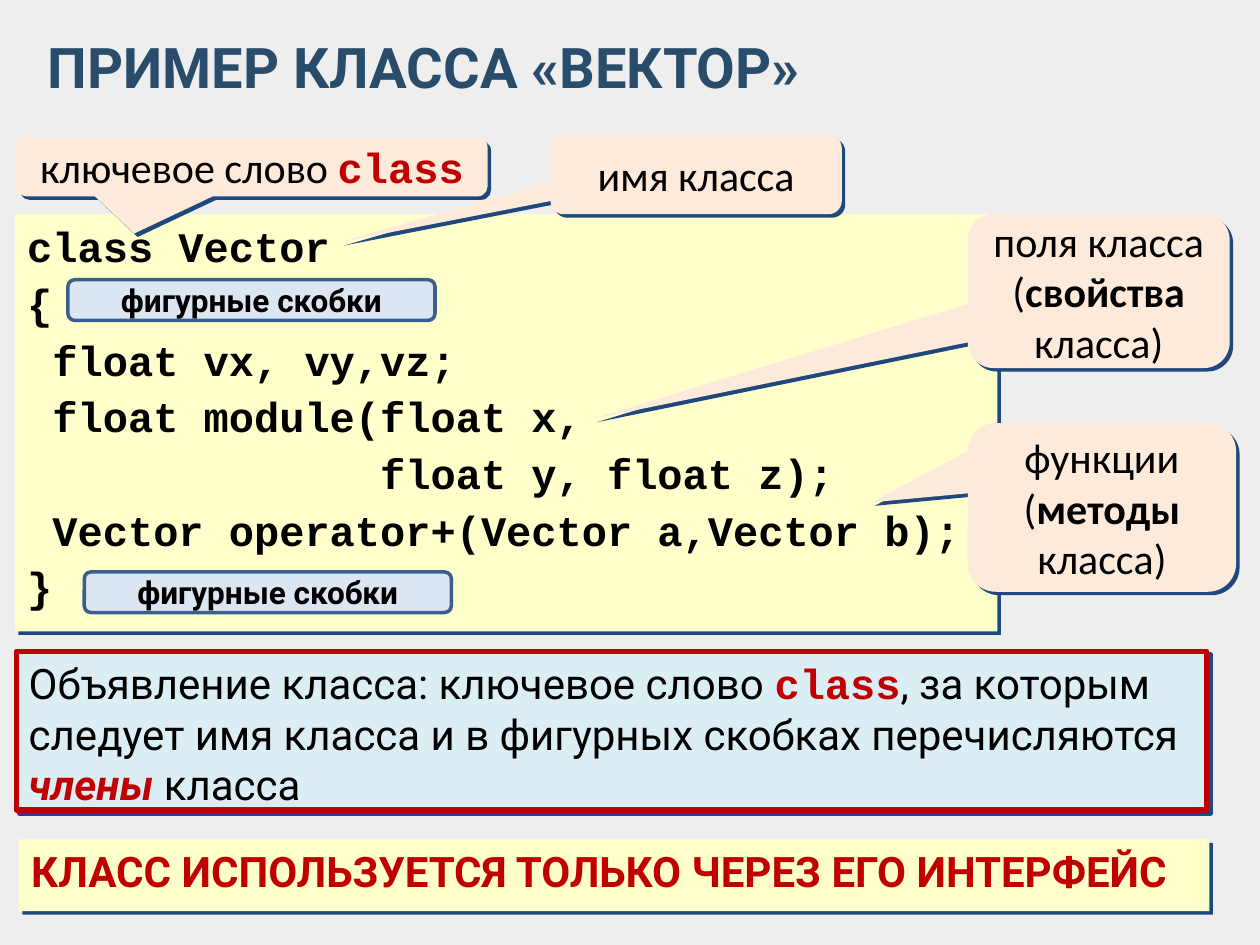
from dataclasses import dataclass

from lxml import etree
from pptx import Presentation
from pptx.dml.color import RGBColor
from pptx.enum.shapes import MSO_SHAPE
from pptx.enum.text import MSO_ANCHOR, PP_ALIGN
from pptx.oxml.ns import qn
from pptx.util import Cm, Pt

RECTANGLE = MSO_SHAPE.RECTANGLE
ROUNDED = MSO_SHAPE.ROUNDED_RECTANGLE
CALLOUT = MSO_SHAPE.ROUNDED_RECTANGULAR_CALLOUT
LEFT, CENTER = PP_ALIGN.LEFT, PP_ALIGN.CENTER
TOP, MIDDLE = MSO_ANCHOR.TOP, MSO_ANCHOR.MIDDLE
TITLE_ONLY = 5


@dataclass(frozen=True)
class Theme:
    background: str = "EEEEEE"
    title: str = "284C6A"
    text: str = "000000"
    accent: str = "C00000"
    shadow: str = "1F497D"
    note: str = "FFFFCC"
    definition: str = "DBEEF4"
    callout: str = "FDEADA"
    label: str = "DCE6F2"
    label_line: str = "3A5F8C"
    sans: str = "Roboto"
    callout_font: str = "Calibri"
    mono: str = "Courier New"
    title_size: int = 32
    body_size: int = 24
    label_size: int = 18


THEME = Theme()
KEYWORD = {"name": THEME.mono, "bold": True, "color": THEME.accent}

CODE = [
    "class Vector",
    "{",
    " float vx, vy,vz;",
    " float module(float x,",
    "              float y, float z);",
    " Vector operator+(Vector a,Vector b);",
    "}",
]


def rgb(value):
    return RGBColor.from_string(value)


def style_font(font, name=None, size=None, color=None, bold=None, italic=None):
    if name:
        font.name = name
    if size:
        font.size = Pt(size)
    if color:
        font.color.rgb = rgb(color)
    font.bold = bold
    font.italic = italic


def write(box, paragraphs, align=LEFT, anchor=TOP, side=0.25, space=0, **font):
    """Fill a box; each paragraph is a list of (text, font changes) spans."""
    frame = box.text_frame
    frame.word_wrap = True
    frame.vertical_anchor = anchor
    frame.margin_left = frame.margin_right = Cm(side)
    frame.margin_top = frame.margin_bottom = Cm(0.13)
    for index, spans in enumerate(paragraphs):
        para = frame.add_paragraph() if index else frame.paragraphs[0]
        para.alignment = align
        if index:
            para.space_before = Pt(space)
        style_font(para.font, **font)
        for text, changes in spans:
            span = para.add_run()
            span.text = text
            if changes:
                style_font(span.font, **changes)


def add_box(page, kind, place, fill, line=None, width=0, shadow=True):
    box = page.shapes.add_shape(kind, *(Cm(length) for length in place))
    box.fill.solid()
    box.fill.fore_color.rgb = rgb(fill)
    if line:
        box.line.color.rgb = rgb(line)
        box.line.width = Pt(width)
    else:
        box.line.fill.background()
    box.shadow.inherit = False
    if shadow:
        effects = box._element.spPr.find(qn("a:effectLst"))
        outer = etree.SubElement(effects, qn("a:outerShdw"), dist=str(Pt(2.8)),
                                 dir="2700000", algn="ctr", rotWithShape="0")
        etree.SubElement(outer, qn("a:srgbClr"), val=THEME.shadow)
    return box


def add_callout(page, place, tail, spans, side=0.25):
    """Tail is the tip's offset from the centre, in widths and heights."""
    box = add_box(page, CALLOUT, place, THEME.callout)
    box.adjustments[0], box.adjustments[1] = tail
    write(box, [spans], CENTER, MIDDLE, side, name=THEME.callout_font,
          size=THEME.body_size, color=THEME.text)


def add_brace_label(page, left, top):
    box = add_box(page, ROUNDED, (left, top, 7.4, 0.82), THEME.label,
                  THEME.label_line, 2, shadow=False)
    write(box, [[("фигурные скобки", {})]], CENTER, MIDDLE, name=THEME.sans,
          size=THEME.label_size, color=THEME.text, bold=True)


def add_title(page, text):
    title = page.shapes.title
    title.left, title.top = Cm(0.71), Cm(0.53)
    title.width, title.height = Cm(23.8), Cm(1.63)
    write(title, [[(text, {})]], name=THEME.sans, size=THEME.title_size,
          color=THEME.title, bold=True)


def add_code(page):
    box = add_box(page, RECTANGLE, (0.3, 4.32, 19.81, 8.41), THEME.note)
    write(box, [[(line, {})] for line in CODE], space=3.6, name=THEME.mono,
          size=THEME.body_size, color=THEME.text, bold=True)


def add_definition(page):
    box = add_box(page, RECTANGLE, (0.33, 13.13, 24, 3.2), THEME.definition,
                  THEME.accent, 3)
    write(box, [[
        ("Объявление класса: ключевое слово ", {}),
        ("class", KEYWORD),
        (", за которым следует имя класса и в фигурных скобках "
         "перечисляются ", {}),
        ("члены ", {"bold": True, "italic": True, "color": THEME.accent}),
        ("класса", {}),
    ]], name=THEME.sans, size=THEME.body_size, color=THEME.text)


def add_conclusion(page, text):
    box = add_box(page, RECTANGLE, (0.38, 16.92, 24, 1.45), THEME.note)
    write(box, [[(text, {})]], name=THEME.sans, size=THEME.body_size,
          color=THEME.accent, bold=True)


def main():
    deck = Presentation()
    deck.slide_width, deck.slide_height = Cm(25.4), Cm(19.05)
    page = deck.slides.add_slide(deck.slide_layouts[TITLE_ONLY])
    page.background.fill.solid()
    page.background.fill.fore_color.rgb = rgb(THEME.background)

    add_title(page, "ПРИМЕР КЛАССА «ВЕКТОР»")
    add_code(page)
    add_definition(page)
    add_callout(page, (11.1, 2.72, 5.87, 1.6), (-1.22, 0.85),
                [("имя класса", {})])
    add_callout(page, (19.51, 4.32, 5.28, 3.1), (-1.93, 0.83),
                [("поля класса (", {}), ("свойства", {"bold": True}),
                 (" класса)", {})], side=0.1)
    add_callout(page, (0.33, 2.77, 9.5, 1.19), (-0.25, 1.13),
                [("ключевое слово ", {}), ("class", KEYWORD)])
    add_brace_label(page, 1.37, 5.64)
    add_brace_label(page, 1.7, 11.53)
    add_callout(page, (19.51, 8.53, 5.41, 3.4), (-0.86, -0.03),
                [("функции (", {}), ("методы", {"bold": True}),
                 (" класса)", {})], side=0.1)
    add_conclusion(page, "КЛАСС ИСПОЛЬЗУЕТСЯ ТОЛЬКО ЧЕРЕЗ ЕГО ИНТЕРФЕЙС")
    deck.save("out.pptx")


if __name__ == "__main__":
    main()
